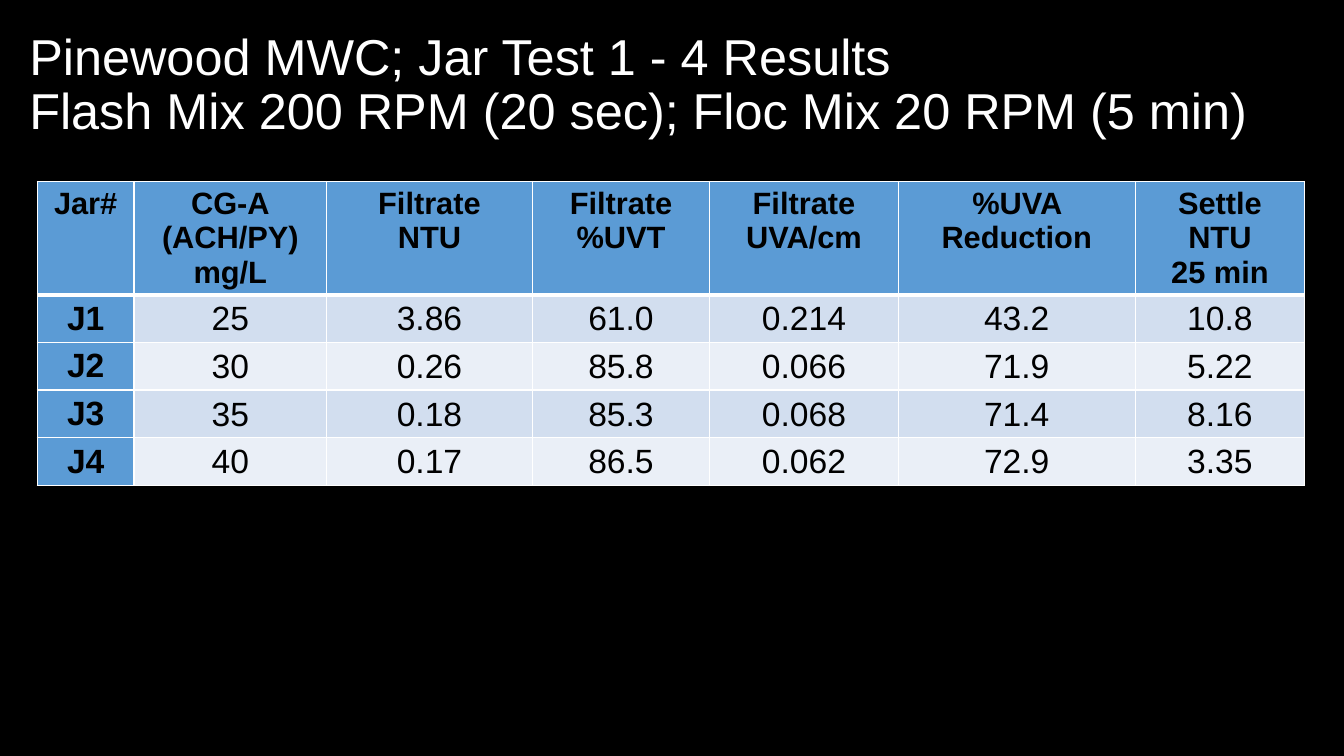
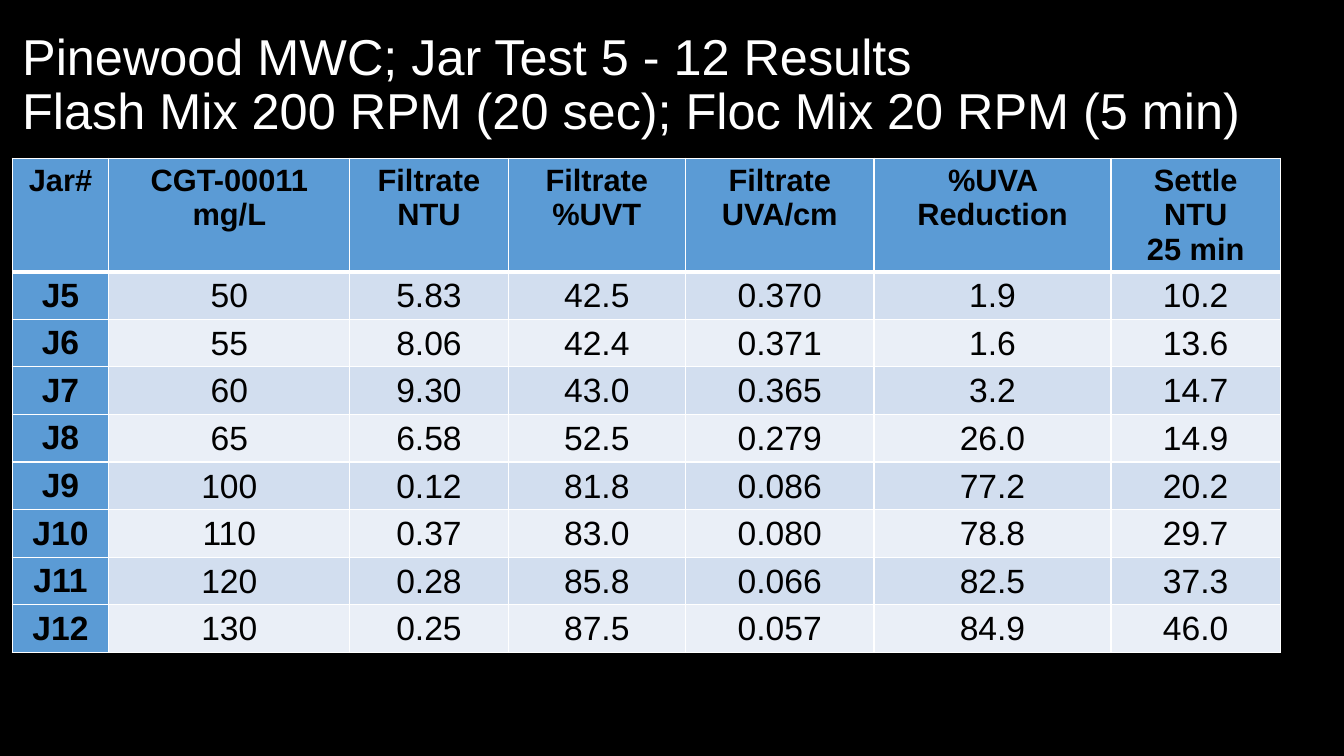
from lxml import etree
from pptx import Presentation
from pptx.dml.color import RGBColor
from pptx.enum.text import MSO_ANCHOR, MSO_AUTO_SIZE, PP_ALIGN
from pptx.oxml.ns import qn
from pptx.util import Inches, Pt

BLACK, WHITE = "000000", "FFFFFF"
HEADER_BLUE = "5B9BD5"
BANDS = ("D2DEEF", "EAEFF7")
FONT = "Arial"

TITLE_TOP, TITLE_HEIGHT = 0.13, 1.45
HEADER_HEIGHT, ROW_HEIGHT = 1.12, 0.47
MIX = "Flash Mix 200 RPM (20 sec); Floc Mix 20 RPM (5 min)"
MEASURES = ["Filtrate\nNTU", "Filtrate\n%UVT", "Filtrate\nUVA/cm",
            "%UVA Reduction", "Settle\nNTU\n25 min"]
SHARED_WIDTHS = [1.76, 1.87, 2.35, 1.68]

JAR_TESTS = [
    {
        "title": "Pinewood MWC; Jar Test 1 - 4 Results",
        "title_left": 0.19, "title_width": 12.9,
        "table_left": 0.37, "table_top": 1.8,
        "widths": [0.96, 1.91, 2.04] + SHARED_WIDTHS,
        "dose": "CG-A\n(ACH/PY)\nmg/L",
        "results": [
            ("J1", "25", "3.86", "61.0", "0.214", "43.2", "10.8"),
            ("J2", "30", "0.26", "85.8", "0.066", "71.9", "5.22"),
            ("J3", "35", "0.18", "85.3", "0.068", "71.4", "8.16"),
            ("J4", "40", "0.17", "86.5", "0.062", "72.9", "3.35"),
        ],
    },
    {
        "title": "Pinewood MWC; Jar Test 5 - 12 Results",
        "title_left": 0.12, "title_width": 13.03,
        "table_left": 0.12, "table_top": 1.57,
        "widths": [0.96, 2.39, 1.57] + SHARED_WIDTHS,
        "dose": "CGT-00011\nmg/L",
        "results": [
            ("J5", "50", "5.83", "42.5", "0.370", "1.9", "10.2"),
            ("J6", "55", "8.06", "42.4", "0.371", "1.6", "13.6"),
            ("J7", "60", "9.30", "43.0", "0.365", "3.2", "14.7"),
            ("J8", "65", "6.58", "52.5", "0.279", "26.0", "14.9"),
            ("J9", "100", "0.12", "81.8", "0.086", "77.2", "20.2"),
            ("J10", "110", "0.37", "83.0", "0.080", "78.8", "29.7"),
            ("J11", "120", "0.28", "85.8", "0.066", "82.5", "37.3"),
            ("J12", "130", "0.25", "87.5", "0.057", "84.9", "46.0"),
        ],
    },
]


def rgb(color):
    return RGBColor.from_string(color)


def format_text(frame, size, color, align, bold=False):
    for paragraph in frame.paragraphs:
        paragraph.alignment = align
        for run in paragraph.runs:
            run.font.name = FONT
            run.font.size = Pt(size)
            run.font.bold = bold
            run.font.color.rgb = rgb(color)


def add_borders(cell, top, bottom):
    """Draw white cell borders; top and bottom are widths in points."""
    properties = cell._tc.get_or_add_tcPr()
    for side, width in (("L", 1), ("R", 1), ("T", top), ("B", bottom)):
        line = etree.SubElement(properties, qn(f"a:ln{side}"), w=str(Pt(width)))
        fill = etree.SubElement(line, qn("a:solidFill"))
        etree.SubElement(fill, qn("a:srgbClr"), val=WHITE)


def add_title(slide, test):
    title = slide.shapes.title
    title.left, title.top = Inches(test["title_left"]), Inches(TITLE_TOP)
    title.width, title.height = Inches(test["title_width"]), Inches(TITLE_HEIGHT)
    frame = title.text_frame
    frame.text = f"{test['title']}\v{MIX}"
    frame.auto_size = MSO_AUTO_SIZE.NONE
    frame.vertical_anchor = MSO_ANCHOR.MIDDLE
    frame.paragraphs[0].line_spacing = 0.9
    format_text(frame, 36, WHITE, PP_ALIGN.LEFT)


def fill_cell(cell, text, row, column):
    is_header, is_jar = row == 0, column == 0
    cell.text_frame.text = text
    format_text(cell.text_frame, 22 if is_header else 24, BLACK,
                PP_ALIGN.CENTER, bold=is_header or is_jar)
    if not (is_header or is_jar):
        cell.vertical_anchor = MSO_ANCHOR.MIDDLE
        cell.margin_left = cell.margin_right = cell.margin_top = Inches(0.01)
        cell.margin_bottom = 0
    add_borders(cell, top=3 if row == 1 else 1, bottom=3 if is_header else 1)
    cell.fill.solid()
    cell.fill.fore_color.rgb = rgb(
        HEADER_BLUE if is_header or is_jar else BANDS[(row - 1) % 2])


def add_results(slide, test):
    rows = [["Jar#", test["dose"]] + MEASURES] + test["results"]
    widths = test["widths"]
    heights = [HEADER_HEIGHT] + [ROW_HEIGHT] * len(test["results"])
    table = slide.shapes.add_table(
        len(rows), len(widths), Inches(test["table_left"]), Inches(test["table_top"]),
        Inches(sum(widths)), Inches(sum(heights))).table
    table.first_col = True
    for column, width in zip(table.columns, widths):
        column.width = Inches(width)
    for row, height in zip(table.rows, heights):
        row.height = Inches(height)
    for r, texts in enumerate(rows):
        for c, text in enumerate(texts):
            fill_cell(table.cell(r, c), text, r, c)


def main():
    deck = Presentation()
    deck.slide_width, deck.slide_height = Inches(13.33), Inches(7.5)
    background = deck.slide_master.background.fill
    background.solid()
    background.fore_color.rgb = rgb(BLACK)
    title_only = deck.slide_layouts[5]
    for test in JAR_TESTS:
        slide = deck.slides.add_slide(title_only)
        add_title(slide, test)
        add_results(slide, test)
    deck.save("out.pptx")


if __name__ == "__main__":
    main()
